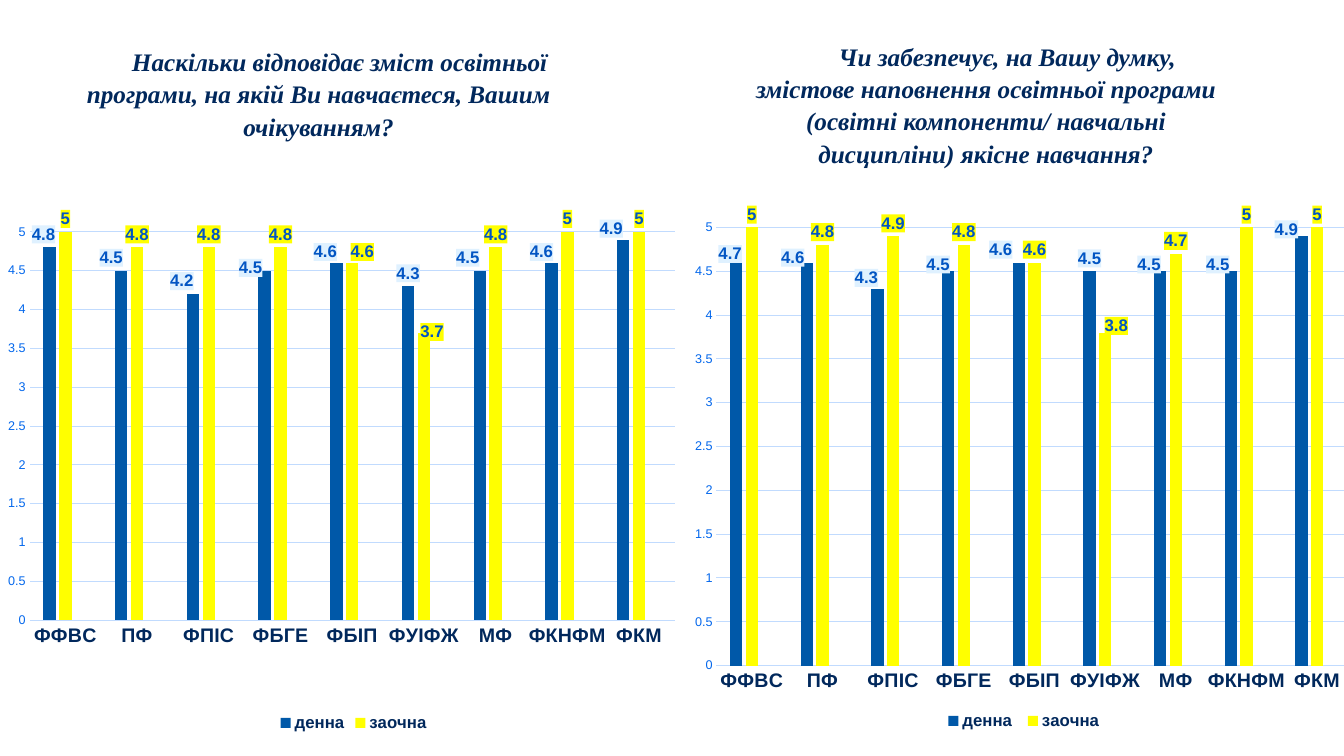
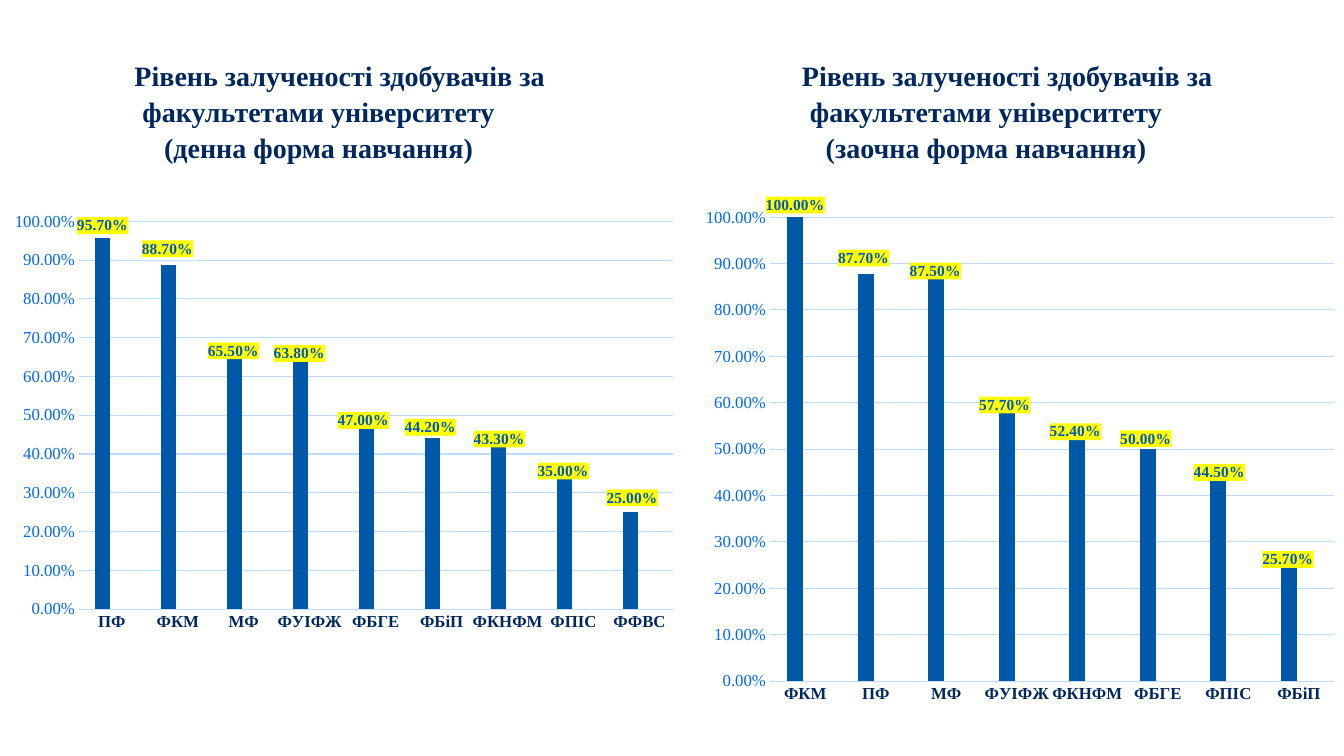
"""Build two slides of column charts on student surveys by faculty."""
from copy import deepcopy
from lxml.etree import SubElement as Sub
from pptx import Presentation
from pptx.chart.data import CategoryChartData as Data
from pptx.dml.color import RGBColor as Rgb
from pptx.enum.chart import XL_CHART_TYPE as Kind, XL_LABEL_POSITION as Spot
from pptx.enum.chart import XL_LEGEND_POSITION as Side, XL_TICK_MARK as Tick
from pptx.enum.text import MSO_ANCHOR as Anchor, PP_ALIGN as Align
from pptx.oxml import parse_xml
from pptx.oxml.ns import nsdecls, qn
from pptx.util import Inches, Pt

HUES = {"ink": "01285C", "axis": "0367EC", "label": "0255C3", "grid": "C1DBFE",
        "bar": "0058A8", "pale": "DFF1FF", "sun": "FFFF00"}
SERIF, SANS = "Times New Roman", "Arial"
SCORE = {"face": SANS, "cat": 14, "val": 9, "tag": 12, "top": 5, "step": 0.5, "form": "General"}
SHARE = {"face": SERIF, "cat": 12, "val": 12, "tag": 11, "top": 1, "step": 0.1, "form": "0.00%"}
UNITS = ["ФФВС", "ПФ", "ФПІС", "ФБГЕ", "ФБІП", "ФУІФЖ", "МФ", "ФКНФМ", "ФКМ"]


def hue(name):
    """Return the named colour."""
    return Rgb.from_string(HUES[name])


def style(font, face, size, tint, bold=False):
    """Set face, size, colour and weight of a font."""
    font.name, font.size, font.bold = face, Pt(size), bold
    font.color.rgb = hue(tint)


def title(slide, left, top, foot, text, size, slant=False):
    """Add a centred heading that stands on its bottom inset."""
    box = slide.shapes.add_textbox(Inches(left), Inches(top), Inches(4.84), Inches(0.8))
    frame = box.text_frame
    frame.word_wrap, frame.vertical_anchor = True, Anchor.BOTTOM
    frame.margin_bottom = Inches(foot)
    frame.text = text
    para = frame.paragraphs[0]
    para.alignment, para.line_spacing = Align.CENTER, 1.07
    para._p.get_or_add_pPr().set("indent", str(Inches(0.42)))
    for run in para.runs:
        style(run.font, SERIF, size, "ink", True)
        run.font.italic = slant


def grid(slide, left, top, highs):
    """Add a clear two-column table with the given row heights."""
    rect = map(Inches, (left, top, 12.5, sum(highs)))
    table = slide.shapes.add_table(len(highs), 2, *rect).table
    table.first_row = table.horz_banding = False
    for row, high in zip(table.rows, highs):
        row.height = Inches(high)
    for cell in table.iter_cells():
        cell.fill.background()


def place(parent, **parts):
    """Fill a chart layout with manual values."""
    lay = Sub(parent, qn("c:manualLayout"))
    for tag, val in parts.items():
        Sub(lay, qn("c:" + tag)).set("val", str(val))


def frame_plot(chart, plot):
    """Fix the inner plot area as fractions of the chart."""
    area = chart._chartSpace.chart.plotArea
    for old in area.findall(qn("c:layout")):
        area.remove(old)
    lay = parse_xml(f"<c:layout {nsdecls('c')}/>")
    area.insert(0, lay)
    x, y, w, h = plot
    place(lay, layoutTarget="inner", xMode="edge", yMode="edge", x=x, y=y, w=w, h=h)


def tag_bars(series, look, back, moves, size):
    """Label the bars on a fill, moving some by hundredths of an inch."""
    tags = series.data_labels
    style(tags.font, look["face"], look["tag"], "label", True)
    tags.number_format, tags.number_format_is_linked = look["form"], False
    tags.position, tags.show_value = Spot.OUTSIDE_END, True
    root = tags._element
    root.find(qn("c:txPr")).addprevious(parse_xml(
        f'<c:spPr {nsdecls("c", "a")}><a:solidFill><a:srgbClr val="{HUES[back]}"/>'
        '</a:solidFill></c:spPr>'))
    parts = list(root)
    for spot, (num, (dx, dy)) in enumerate(moves.items()):
        tag = parse_xml(f'<c:dLbl {nsdecls("c")}><c:idx val="{num}"/><c:layout/></c:dLbl>')
        place(tag[1], x=round(dx / 100 / size[0], 4), y=round(dy / 100 / size[1], 4))
        tag.extend(deepcopy(part) for part in parts if part.tag != qn("c:showLeaderLines"))
        root.insert(spot, tag)


def set_axes(chart, look):
    """Style both axes and the grid."""
    cat, val = chart.category_axis, chart.value_axis
    for axis in (cat, val):
        axis.major_tick_mark = axis.minor_tick_mark = Tick.NONE
    style(cat.tick_labels.font, look["face"], look["cat"], "ink", True)
    style(val.tick_labels.font, look["face"], look["val"], "axis")
    val.minimum_scale, val.maximum_scale, val.major_unit = 0, look["top"], look["step"]
    val.tick_labels.number_format = look["form"]
    val.tick_labels.number_format_is_linked = False
    val.format.line.fill.background()
    for line in (cat.format.line, val.major_gridlines.format.line):
        line.color.rgb, line.width = hue("grid"), Pt(0.75)


def add_key(chart, blank):
    """Add a legend below that hides the blank series."""
    chart.has_legend = True
    key = chart.legend
    key.position, key.include_in_layout = Side.BOTTOM, False
    style(key.font, SANS, 12, "ink", True)
    key._element.find(qn("c:legendPos")).addnext(parse_xml(
        f'<c:legendEntry {nsdecls("c")}><c:idx val="{blank}"/><c:delete val="1"/></c:legendEntry>'))


def columns(slide, rect, plot, look, cats, rows):
    """Add a column chart with a blank last series."""
    data = Data(number_format=look["form"])
    data.categories = cats
    for name, vals, *_ in rows:
        data.add_series(name, vals)
    data.add_series(f"Series {len(rows) + 1}", [None] * len(cats))
    chart = slide.shapes.add_chart(Kind.COLUMN_CLUSTERED, *map(Inches, rect), data).chart
    chart.has_title = chart.has_legend = False
    style(chart.font, SANS, 10, "ink")
    bars = chart.plots[0]
    bars.gap_width, bars.overlap, bars.vary_by_categories = 219, -27, False
    for series, (_, _, fill, back, moves) in zip(bars.series, rows):
        series.format.fill.solid()
        series.format.fill.fore_color.rgb = hue(fill)
        series.invert_if_negative = False
        tag_bars(series, look, back, moves, rect[2:])
    set_axes(chart, look)
    frame_plot(chart, plot)
    return chart


def scores(slide, rect, plot, name, day, far):
    """Chart the mean scores of day and distance students."""
    rows = [(name, day[0], "bar", "pale", day[1]),
            ("заочна", far[0], "sun", "sun", far[1])]
    add_key(columns(slide, rect, plot, SCORE, UNITS, rows), len(rows))


def shares(slide, rect, plot, cats, vals, moves):
    """Chart the share of students who took part."""
    columns(slide, rect, plot, SHARE, cats, [("Series 1", vals, "bar", "sun", moves)])


def main():
    """Build and save the slides."""
    deck = Presentation()
    deck.slide_width, deck.slide_height = Inches(13.33), Inches(7.5)
    first, second = (deck.slides.add_slide(deck.slide_layouts[6]) for _ in range(2))

    title(first, 0.74, 0.87, 0.27, "Наскільки відповідає зміст освітньої програми, "
          "на якій Ви навчаєтеся, Вашим очікуванням?", 18, True)
    grid(first, 0.51, 1.64, (1.93, 2.03, 1.69))
    title(first, 7.36, 1.04, 0.17, "Чи забезпечує, на Вашу думку, змістове наповнення освітньої "
          "програми (освітні компоненти/ навчальні дисципліни) якісне навчання?", 18, True)
    scores(first, (0.08, 2.07, 6.84, 5.23), (0.029, 0.044, 0.938, 0.737), "денна",
           ([4.8, 4.5, 4.2, 4.5, 4.6, 4.3, 4.5, 4.6, 4.9],
            {0: (-6, 0), 1: (-10, 0), 2: (-11, 0), 3: (-14, 10), 4: (-11, 2),
             6: (-12, 0), 7: (-10, 2), 8: (-12, 2)}),
           ([5, 4.8, 4.8, 4.8, 4.6, 3.7, 4.8, 5, 5], {4: (10, 2), 5: (8, 12)}))
    scores(first, (6.76, 2.04, 6.79, 5.24), (0.051, 0.041, 0.929, 0.83), "денна ",
           ([4.7, 4.6, 4.3, 4.5, 4.6, 4.5, 4.5, 4.5, 4.9],
            {0: (-6, 13), 1: (-14, 8), 2: (-11, 2), 3: (-10, 6), 4: (-18, 0),
             6: (-11, 6), 7: (-13, 6), 8: (-15, 6)}),
           ([5, 4.8, 4.9, 4.8, 4.6, 3.8, 4.7, 5, 5], {5: (11, 6)}))

    for left, form in ((0.74, "денна"), (7.36, "заочна")):
        title(second, left, 0.87, 0.04, "Рівень залученості здобувачів за факультетами "
              f"університету\v({form} форма навчання)", 20)
        if form == "денна":
            grid(second, -3.25, 2.31, (1.93, 2.03, 1.37))
    shares(second, (0, 1.95, 6.87, 5.13), (0.114, 0.048, 0.857, 0.75),
           ["ПФ", "ФКМ", "МФ", "ФУІФЖ", "ФБГЕ", "ФБіП", "ФКНФМ", "ФПІС", "ФФВС"],
           [0.957, 0.887, 0.655, 0.638, 0.47, 0.442, 0.433, 0.35, 0.25],
           {1: (-1, -4), 2: (-1, 8), 3: (-1, 4), 4: (-3, 6), 5: (-2, 2),
            6: (1, 10), 7: (-1, 10), 8: (2, -2)})
    shares(second, (6.87, 1.95, 6.5, 5.13), (0.118, 0.038, 0.861, 0.899),
           ["ФКМ", "ПФ", "МФ", "ФУІФЖ", "ФКНФМ", "ФБГЕ", "ФПІС", "ФБіП"],
           [1, 0.877, 0.875, 0.577, 0.524, 0.5, 0.445, 0.257],
           {1: (-2, -4), 2: (-1, 8), 3: (-2, 4), 4: (-2, 6), 5: (-2, 2),
            6: (1, 10), 7: (-1, 10)})
    deck.save("out.pptx")


if __name__ == "__main__":
    main()
